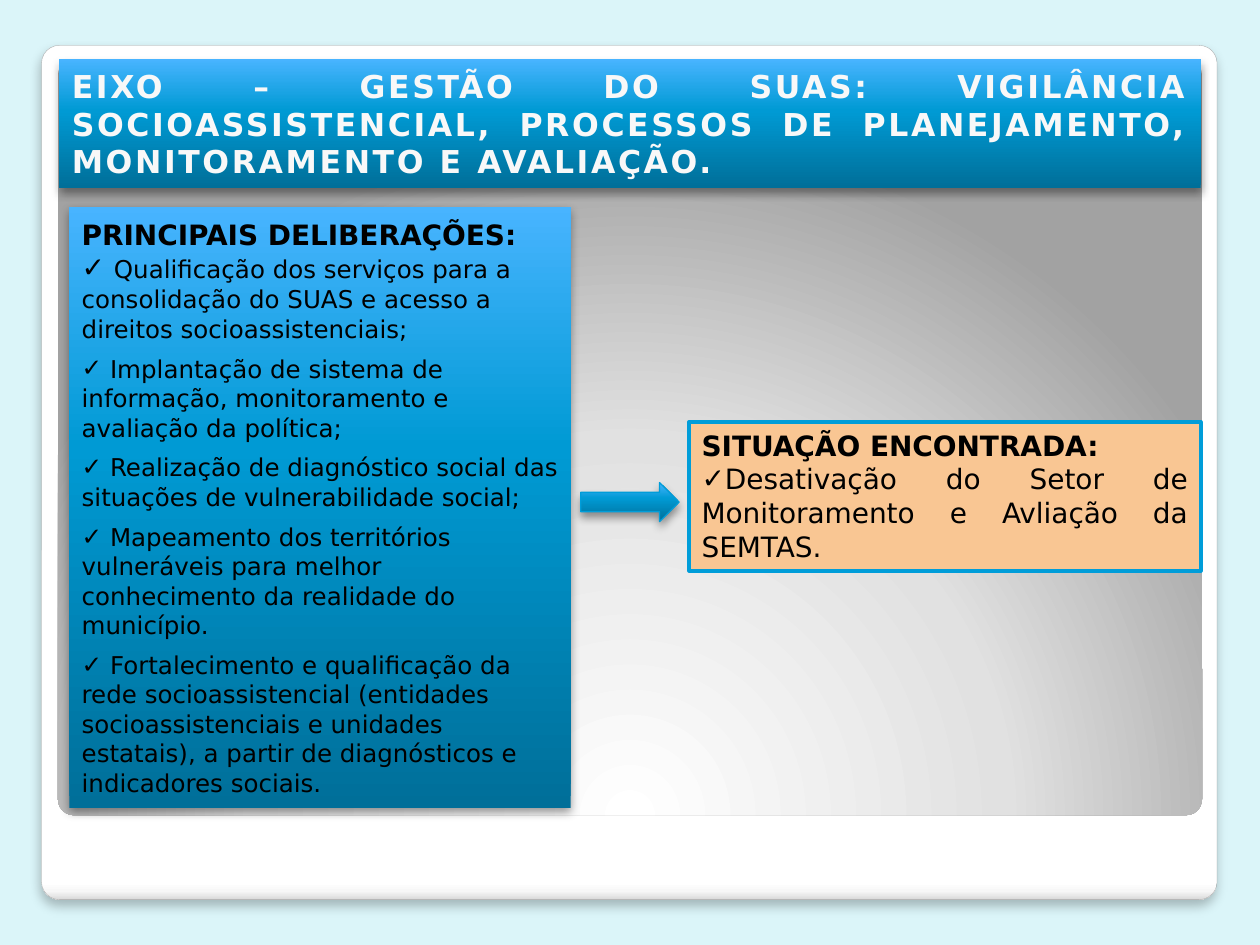
from lxml.etree import SubElement
from pptx import Presentation
from pptx.dml.color import RGBColor
from pptx.enum.shapes import MSO_SHAPE as Preset
from pptx.enum.text import MSO_ANCHOR as Anchor, MSO_AUTO_SIZE as AutoSize, PP_ALIGN as Align
from pptx.oxml.ns import qn
from pptx.util import Inches, Pt

FONT = "DejaVu Sans"
COLORS = {
    "background": "DBF5F9", "frame_edge": "A4A4A4", "accent": "009DD9",
    "peach": "F9C693", "title": "F8F8F8", "text": "000000", "shadow": "000000",
}
FRAME_STOPS = [(0, "FFFFFF"), (98, "FFFFFF"), (99, "F7F7F7"), (100, "DADADA")]
PANEL_STOPS = [(0, "FFFFFF"), (55, "E1E1E1"), (100, "A2A2A2")]
BLUE_STOPS = [(0, "006F99"), (60, "009AD4"), (100, "48B4FF")]

TITLE = ("EIXO – GESTÃO DO SUAS: VIGILÂNCIA SOCIOASSISTENCIAL, PROCESSOS DE "
         "PLANEJAMENTO, MONITORAMENTO E AVALIAÇÃO.")
DELIBERATIONS = [
    "Qualificação dos serviços para a consolidação do SUAS e acesso a direitos socioassistenciais;",
    "Implantação de sistema de informação, monitoramento e avaliação da política;",
    "Realização de diagnóstico social das situações de vulnerabilidade social;",
    "Mapeamento dos territórios vulneráveis para melhor conhecimento da realidade do município.",
    "Fortalecimento e qualificação da rede socioassistencial (entidades socioassistenciais e "
    "unidades estatais), a partir de diagnósticos e indicadores sociais.",
]
SITUATION = "Desativação do Setor de Monitoramento e Avliação da SEMTAS."


def rgb(name):
    return RGBColor.from_string(COLORS[name])


def add_preset(slide, preset, box, radius=None):
    shape = slide.shapes.add_shape(preset, *map(Inches, box))
    if radius is not None:
        shape.adjustments[0] = radius
    return shape


def fill_gradient(shape, stops, angle=None):
    shape.fill.gradient()
    gradient = shape._element.spPr.find(qn("a:gradFill"))
    for child in list(gradient):
        gradient.remove(child)
    stop_list = SubElement(gradient, qn("a:gsLst"))
    for position, color in stops:
        stop = SubElement(stop_list, qn("a:gs"), pos=str(position * 1000))
        SubElement(stop, qn("a:srgbClr"), val=color)
    if angle is None:
        circle = SubElement(gradient, qn("a:path"), path="circle")
        SubElement(circle, qn("a:fillToRect"), l="50000", t="175000", r="50000", b="-75000")
    else:
        SubElement(gradient, qn("a:lin"), ang=str(angle * 60000), scaled="0")


def set_line(shape, color=None, width=0):
    if color is None:
        shape.line.fill.background()
    else:
        shape.line.color.rgb = rgb(color)
        shape.line.width = Pt(width)


def set_shadow(shape, opacity=40, blur=5.2, distance=3):
    shape.shadow.inherit = False
    effects = shape._element.spPr.find(qn("a:effectLst"))
    shadow = SubElement(effects, qn("a:outerShdw"), blurRad=str(Pt(blur)),
                        dist=str(Pt(distance)), dir="5400000", algn="ctr", rotWithShape="0")
    color = SubElement(shadow, qn("a:srgbClr"), val=COLORS["shadow"])
    SubElement(color, qn("a:alpha"), val=str(opacity * 1000))


def style_blue(shape, line=None, width=0):
    fill_gradient(shape, BLUE_STOPS, 270)
    set_line(shape, line, width)
    set_shadow(shape)


def prepare_text(shape, anchor):
    frame = shape.text_frame
    frame.word_wrap = True
    frame.auto_size = AutoSize.NONE
    frame.vertical_anchor = anchor
    frame.margin_left = frame.margin_right = Inches(0.1)
    frame.margin_top = frame.margin_bottom = Inches(0.05)
    return frame


def add_run(paragraph, text, size, color="text", bold=False):
    run = paragraph.add_run()
    run.text = text
    run.font.name = FONT
    run.font.size = Pt(size)
    run.font.bold = bold
    run.font.color.rgb = rgb(color)
    return run


def add_check(paragraph):
    properties = paragraph._p.get_or_add_pPr()
    properties.set("marL", "0")
    properties.set("indent", "0")
    SubElement(properties, qn("a:buFont"), typeface=FONT)
    SubElement(properties, qn("a:buChar"), char="✓")


def build_backdrop(slide, box):
    left, top, width, height = box
    frame = add_preset(slide, Preset.ROUNDED_RECTANGLE, box, 0.021)
    fill_gradient(frame, FRAME_STOPS, 90)
    set_line(frame, "frame_edge", 0.16)
    set_shadow(frame, 25, 6, 4)
    panel = add_preset(slide, Preset.ROUNDED_RECTANGLE,
                       (left + 0.13, top + 0.11, width - 0.25, height - 0.78), 0.021)
    fill_gradient(panel, PANEL_STOPS)
    set_line(panel)
    panel.shadow.inherit = False


def build_title(slide, box):
    title = slide.shapes.title
    slide.shapes._spTree.append(title._element)
    title.left, title.top, title.width, title.height = map(Inches, box)
    style_blue(title)
    heading = prepare_text(title, Anchor.MIDDLE).paragraphs[0]
    heading.alignment = Align.JUSTIFY
    run = add_run(heading, TITLE, 18, "title", True)
    run.font._element.set("spc", "150")


def build_situation(slide, box):
    card = add_preset(slide, Preset.RECTANGLE, box)
    card.fill.solid()
    card.fill.fore_color.rgb = rgb("peach")
    set_line(card, "accent", 2.25)
    card.shadow.inherit = False
    frame = prepare_text(card, Anchor.TOP)
    heading, finding = frame.paragraphs[0], frame.add_paragraph()
    heading.alignment = finding.alignment = Align.JUSTIFY
    add_run(heading, "SITUAÇÃO ENCONTRADA:", 16, bold=True)
    add_check(finding)
    add_run(finding, SITUATION, 16)


def build_deliberations(slide, box):
    card = add_preset(slide, Preset.RECTANGLE, box)
    style_blue(card)
    frame = prepare_text(card, Anchor.MIDDLE)
    heading = frame.paragraphs[0]
    heading.alignment = Align.LEFT
    add_run(heading, "PRINCIPAIS DELIBERAÇÕES:", 16, bold=True)
    for index, deliberation in enumerate(DELIBERATIONS):
        item = frame.add_paragraph()
        item.alignment = Align.LEFT
        item.space_before = Pt(6 if index else 0)
        add_check(item)
        add_run(item, " ", 14 if index else 16)
        add_run(item, deliberation, 14)


def build_arrow(slide, box):
    style_blue(add_preset(slide, Preset.RIGHT_ARROW, box), "accent", 0.75)


def main():
    deck = Presentation()
    deck.slide_width, deck.slide_height = Inches(10), Inches(7.5)
    slide = deck.slides.add_slide(deck.slide_layouts[5])
    slide.background.fill.solid()
    slide.background.fill.fore_color.rgb = rgb("background")
    build_backdrop(slide, (0.33, 0.36, 9.33, 6.78))
    build_title(slide, (0.47, 0.47, 9.06, 1.02))
    build_situation(slide, (5.47, 3.35, 4.06, 1.18))
    build_deliberations(slide, (0.55, 1.64, 3.98, 4.77))
    build_arrow(slide, (4.61, 3.83, 0.78, 0.31))
    deck.save("out.pptx")


if __name__ == "__main__":
    main()
